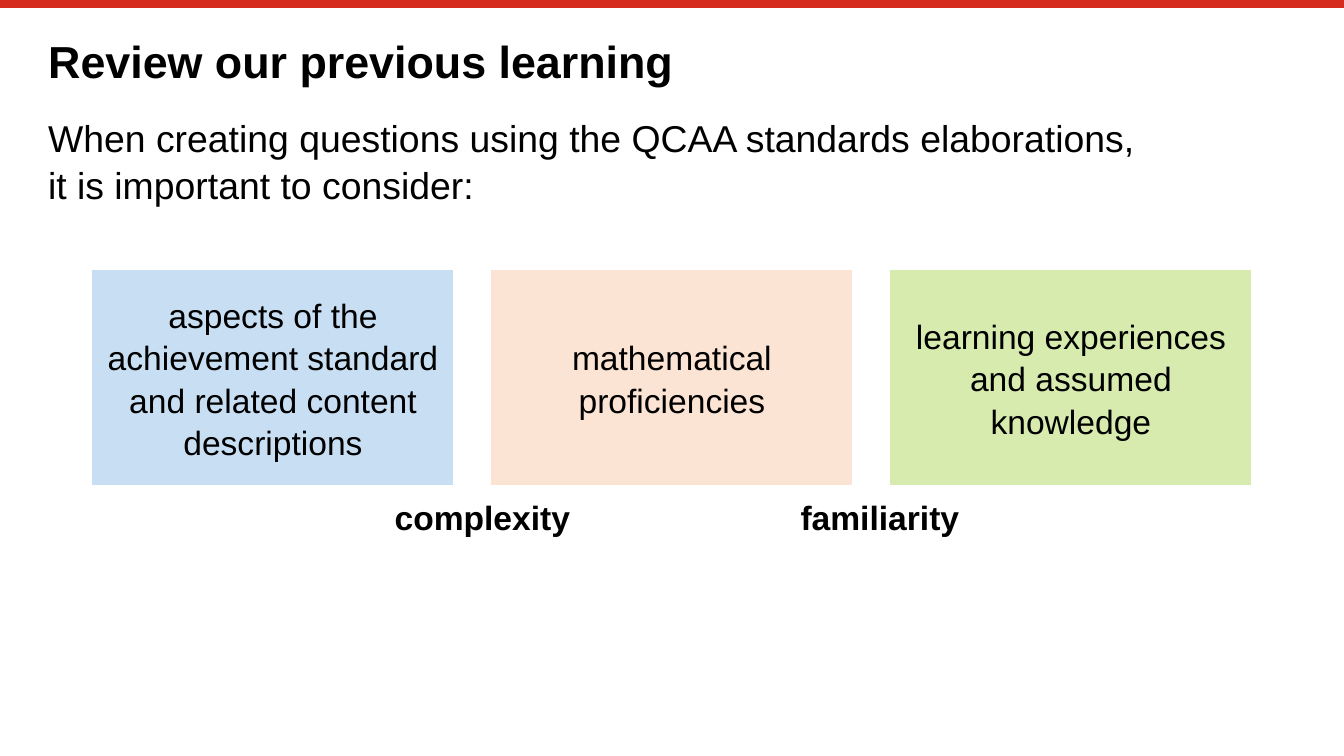
from lxml.etree import SubElement
from pptx import Presentation
from pptx.dml.color import RGBColor
from pptx.enum.shapes import MSO_CONNECTOR as Connector, MSO_SHAPE as Shape
from pptx.enum.text import MSO_ANCHOR as Anchor, MSO_AUTO_SIZE as AutoSize, PP_ALIGN as Align
from pptx.oxml.ns import qn
from pptx.util import Cm, Pt

WIDTH, HEIGHT = 25.4, 14.29
MARGIN, CONTENT_WIDTH = 0.91, 23.6
CARDS = [
    ("aspects of the achievement standard and related content descriptions", "C8DEF2"),
    ("mathematical proficiencies", "FBE4D3"),
    ("learning experiences and assumed knowledge", "D6EBAD"),
]
LABELS = [("complexity", 7.21, 4.19), ("familiarity", 14.88, 3.96)]


def color(hex_value):
    """Turn a hex string into a colour."""
    return RGBColor.from_string(hex_value)


def set_attributes(target, values):
    """Set each attribute of the target from a dict."""
    for name, value in values.items():
        setattr(target, name, value)


def write_text(shape, text, size, bold=False, inset=0, align=Align.LEFT,
               anchor=Anchor.TOP, spacing=1.05):
    """Fill a shape with one formatted paragraph."""
    frame = shape.text_frame
    frame.text = text
    set_attributes(frame, {
        "word_wrap": True, "auto_size": AutoSize.NONE, "vertical_anchor": anchor,
        "margin_left": Cm(inset), "margin_right": Cm(inset),
        "margin_top": Cm(inset), "margin_bottom": Cm(inset),
    })
    paragraph = frame.paragraphs[0]
    set_attributes(paragraph, {"alignment": align, "line_spacing": spacing, "space_before": Pt(0)})
    set_attributes(paragraph.font, {"name": "Arial", "size": Pt(size), "bold": bold})
    paragraph.font.color.rgb = color("000000")


def add_top_rule(slide, top, width):
    """Draw the red rule across the top edge."""
    rule = slide.shapes.add_connector(Connector.STRAIGHT, 0, Cm(top), Cm(width), Cm(top))
    rule.line.color.rgb = color("D52B1E")
    rule.line.width = Pt(4.2)
    SubElement(rule._element.spPr, qn("a:effectLst"))


def place_title(slide, left, top, width, height):
    """Move and format the title placeholder."""
    title = slide.shapes.title
    set_attributes(title, {"left": Cm(left), "top": Cm(top),
                           "width": Cm(width), "height": Cm(height)})
    write_text(title, "Review our previous learning", 24, bold=True, spacing=0.9)


def add_introduction(slide, left, top, width, height):
    """Add the sentence that leads into the cards."""
    box = slide.shapes.add_textbox(Cm(left), Cm(top), Cm(width), Cm(height))
    write_text(box, "When creating questions using the QCAA standards elaborations,\v"
                    "it is important to consider:", 20)


def add_cards(slide, left, top, width, height, gap=0.68):
    """Share the box equally between the coloured cards."""
    card_width = (width - gap * (len(CARDS) - 1)) / len(CARDS)
    for index, (text, fill) in enumerate(CARDS):
        card_left = left + index * (card_width + gap)
        card = slide.shapes.add_shape(Shape.RECTANGLE, Cm(card_left), Cm(top),
                                      Cm(card_width), Cm(height))
        card.shadow.inherit = False
        card.fill.solid()
        card.fill.fore_color.rgb = color(fill)
        card.line.color.rgb = color("FFFFFF")
        card.line.width = Pt(1)
        write_text(card, text, 18, inset=0.18, align=Align.CENTER, anchor=Anchor.MIDDLE)


def add_labels(slide, top, height):
    """Add the bold labels beneath the cards."""
    for text, left, width in LABELS:
        label = slide.shapes.add_textbox(Cm(left), Cm(top), Cm(width), Cm(height))
        write_text(label, text, 18, bold=True, inset=0.25, anchor=Anchor.MIDDLE)


def main():
    """Build and save the presentation."""
    presentation = Presentation()
    set_attributes(presentation, {"slide_width": Cm(WIDTH), "slide_height": Cm(HEIGHT)})
    slide = presentation.slides.add_slide(presentation.slide_layouts[5])
    add_top_rule(slide, 0.08, WIDTH)
    place_title(slide, MARGIN, 0.76, CONTENT_WIDTH, 0.99)
    add_introduction(slide, MARGIN, 2.13, CONTENT_WIDTH, 10.31)
    add_cards(slide, 1.73, 5.08, 21.94, 4.11)
    add_labels(slide, 9.25, 1.02)
    presentation.save("out.pptx")


if __name__ == "__main__":
    main()
